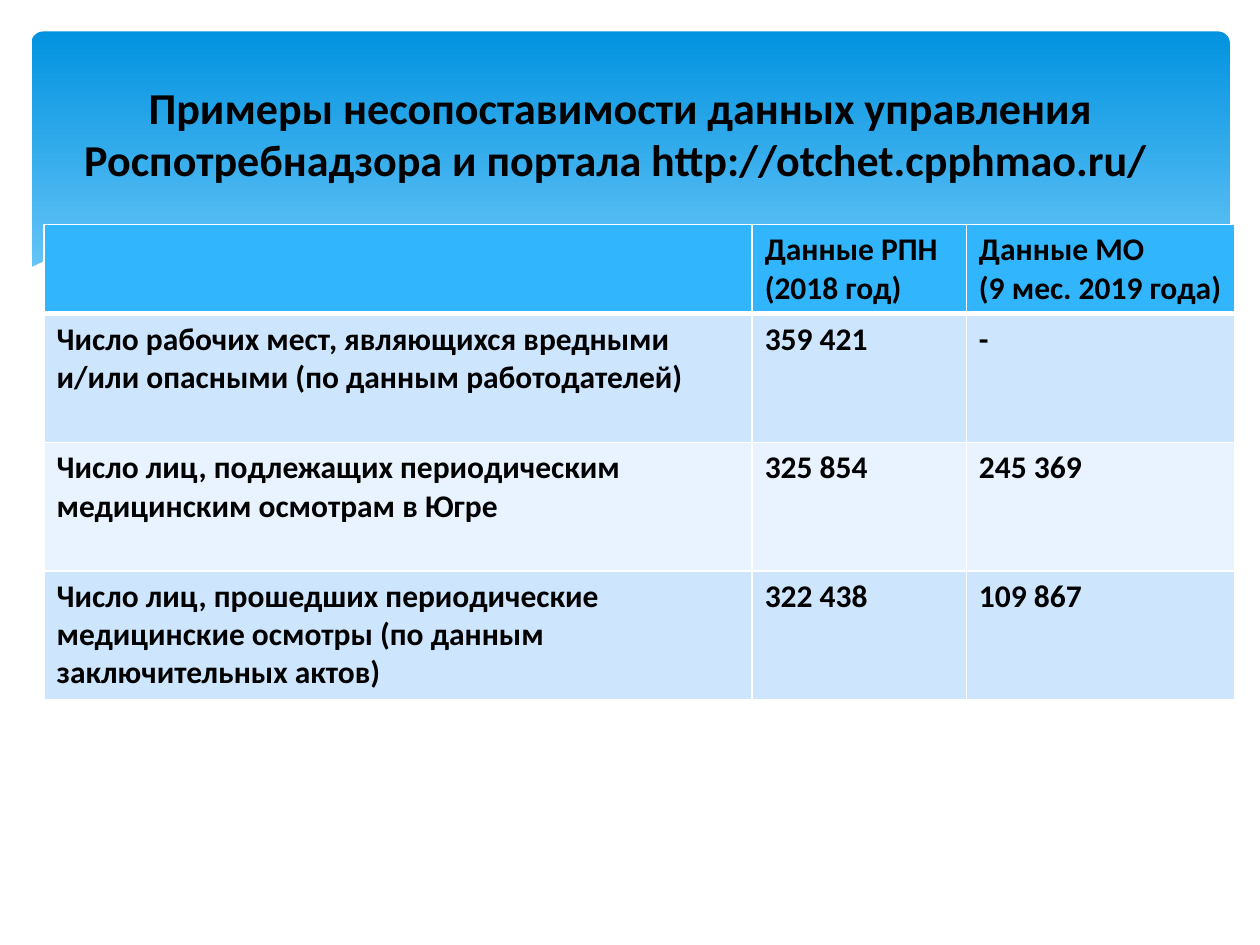
from lxml.etree import SubElement
from pptx import Presentation
from pptx.dml.color import RGBColor
from pptx.enum.shapes import MSO_SHAPE as Shape
from pptx.enum.text import MSO_ANCHOR as Anchor, PP_ALIGN as Align
from pptx.oxml.ns import qn
from pptx.util import Inches, Pt


def paint(target, color):
    target.rgb = RGBColor.from_string(color)


def add_wave(points, fill=None, opacity=100):
    builder = slide.shapes.build_freeform(*points[0], scale=unit)
    builder.add_line_segments(points[1:], close=fill is not None)
    wave = builder.convert_to_shape()
    wave.shadow.inherit = False
    if fill is None:
        wave.fill.background()
        wave.line.width = 0
        paint(wave.line.color, "FFFFFF")
        return
    wave.line.fill.background()
    wave.fill.solid()
    paint(wave.fill.fore_color, fill)
    if opacity < 100:
        tint = wave.fill._xPr.find(qn("a:solidFill"))[0]
        SubElement(tint, qn("a:alpha"), val=str(opacity * 1000))


deck = Presentation()
deck.slide_width, deck.slide_height = Inches(10), Inches(7.5)
unit = deck.slide_width // 1000
slide = deck.slides.add_slide(deck.slide_layouts[6])

banner = slide.shapes.add_shape(
    Shape.ROUNDED_RECTANGLE, *(unit * n for n in (25, 25, 951, 270)))
banner.adjustments[0] = 0.034
banner.shadow.inherit = False
banner.line.fill.background()
banner.fill.gradient()
banner.fill.gradient_angle = 270
for stop, (position, color) in zip(
        banner.fill.gradient_stops, [(0, "0293E0"), (0.9, "83D3FE")]):
    stop.position = position
    paint(stop.color, color)

add_wave([(975, 200), (935, 207), (891, 216), (832, 230), (779, 242), (729, 253),
          (661, 265), (705, 271), (757, 275), (803, 278), (854, 276), (897, 270),
          (935, 262), (976, 247), (976, 200)], "C6E7FC", 29)
add_wave([(893, 273), (837, 265), (775, 254), (706, 240), (629, 222), (569, 208),
          (514, 198), (465, 191), (420, 187), (361, 185), (313, 188), (286, 191),
          (342, 199), (404, 211), (491, 232), (566, 248), (634, 261), (695, 270),
          (748, 276), (796, 278), (848, 277)], "C6E7FC", 40)
add_wave([(309, 195), (344, 190), (387, 187), (433, 187), (489, 190), (556, 197),
          (636, 208), (695, 219), (760, 233), (831, 251), (907, 272)])
add_wave([(613, 257), (672, 241), (748, 223), (806, 210), (866, 199), (924, 190),
          (975, 185)])
add_wave([(977, 246), (940, 259), (899, 269), (850, 275), (809, 277), (761, 275),
          (708, 270), (648, 262), (579, 250), (503, 233), (447, 220), (391, 207),
          (340, 197), (292, 190), (250, 186), (211, 184), (161, 184), (119, 187),
          (85, 193), (59, 199), (40, 205), (23, 213), (23, 329), (977, 329)], "FFFFFF")

rows = [
    ("", "Данные РПН (2018 год)", "Данные МО\n(9 мес. 2019 года)"),
    ("Число рабочих мест, являющихся вредными и/или опасными (по данным работодателей)",
     "359 421", "-"),
    ("Число лиц, подлежащих периодическим медицинским осмотрам в Югре",
     "325 854", "245 369"),
    ("Число лиц, прошедших периодические медицинские осмотры "
     "(по данным заключительных актов)", "322 438", "109 867"),
]
column_widths = (562, 170, 213)
row_heights = (71, 102, 102, 102)
row_fills = ("31B6FD", "CEE5FE", "E8F3FF", "CEE5FE")
comparison = slide.shapes.add_table(
    len(rows), len(column_widths), unit * 35, unit * 178,
    unit * sum(column_widths), unit * sum(row_heights)).table
for column, width in zip(comparison.columns, column_widths):
    column.width = unit * width

for r, texts in enumerate(rows):
    comparison.rows[r].height = unit * row_heights[r]
    for c, text in enumerate(texts):
        cell = comparison.cell(r, c)
        cell.text_frame.text = text
        for paragraph in cell.text_frame.paragraphs:
            paragraph.font.size = Pt(18)
            for run in paragraph.runs:
                run.font.name, run.font.size, run.font.bold = "Calibri", Pt(18), True
                paint(run.font.color, "000000")
        properties = cell._tc.get_or_add_tcPr()
        for side in ("lnL", "lnR", "lnT", "lnB"):
            thick = (r, side) in ((0, "lnB"), (1, "lnT"))
            border = SubElement(properties, qn("a:" + side), w=str(Pt(3 if thick else 1)))
            SubElement(SubElement(border, qn("a:solidFill")), qn("a:srgbClr"), val="FFFFFF")
        cell.fill.solid()
        paint(cell.fill.fore_color, row_fills[r])

title = slide.shapes.add_textbox(*(unit * n for n in (35, 37, 915, 137))).text_frame
title.word_wrap = True
title.vertical_anchor = Anchor.MIDDLE
title.text = ("Примеры несопоставимости данных управления Роспотребнадзора "
              "и портала http://otchet.cpphmao.ru/ ")
heading = title.paragraphs[0]
heading.alignment = Align.CENTER
heading_font = heading.runs[0].font
heading_font.name, heading_font.size, heading_font.bold = "Calibri", Pt(25.2), True
paint(heading_font.color, "000000")

deck.save("out.pptx")
